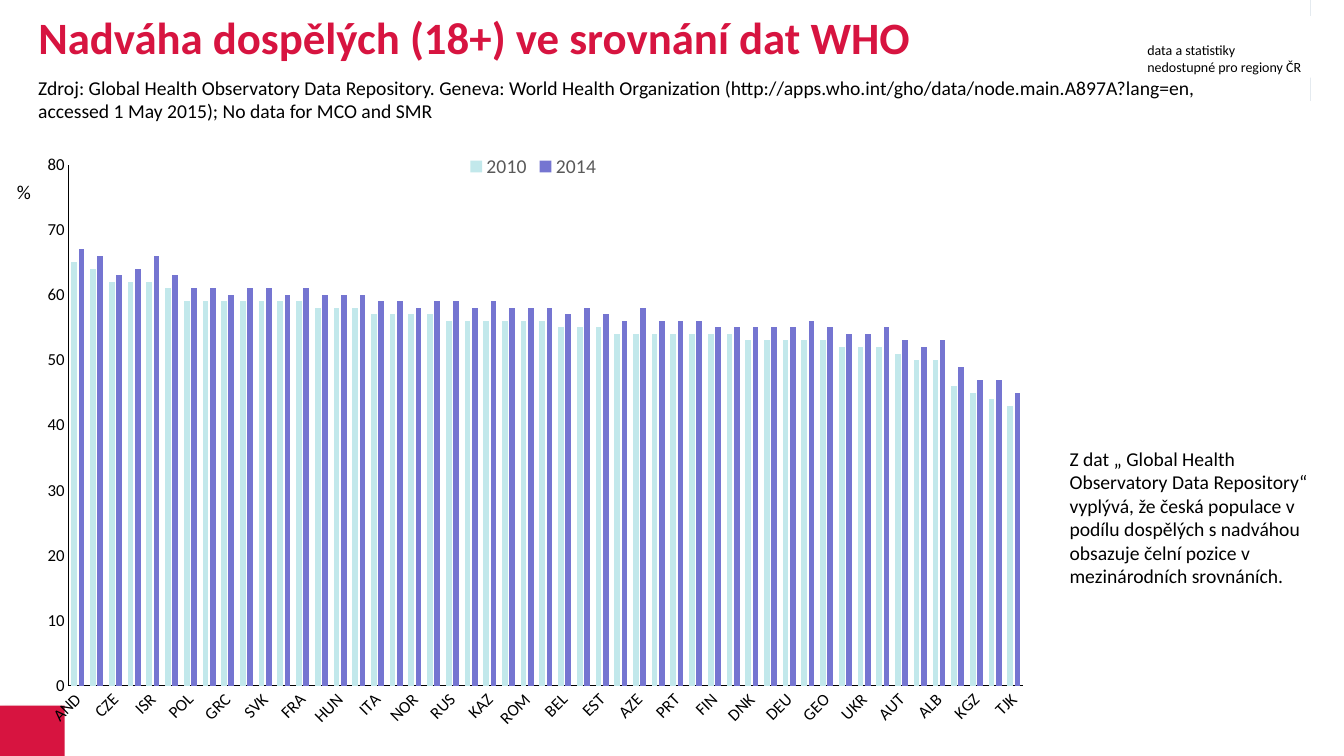
from lxml.etree import SubElement
from pptx import Presentation
from pptx.chart.data import CategoryChartData
from pptx.dml.color import RGBColor
from pptx.enum.chart import XL_CHART_TYPE, XL_LEGEND_POSITION, XL_TICK_MARK
from pptx.enum.shapes import MSO_SHAPE
from pptx.enum.text import MSO_ANCHOR, PP_ALIGN
from pptx.oxml import parse_xml
from pptx.oxml.ns import nsdecls, qn
from pptx.util import Inches, Pt

WIDTH, HEIGHT = 13.33, 7.5
FONT = "Calibri"
RED = RGBColor(0xD7, 0x14, 0x40)
BLUE = RGBColor(0x2E, 0x59, 0x80)
WHITE = RGBColor(0xFF, 0xFF, 0xFF)
BLACK = RGBColor(0, 0, 0)
GREY = RGBColor(0x59, 0x59, 0x59)
AQUA = RGBColor(0xC2, 0xE8, 0xEB)
VIOLET = RGBColor(0x75, 0x75, 0xD1)

TITLE = "Nadváha dospělých (18+) ve srovnání dat WHO"
SOURCE = (
    "Zdroj: Global Health Observatory Data Repository. Geneva: World Health Organization "
    "(http://apps.who.int/gho/data/node.main.A897A?lang=en, accessed 1 May 2015); "
    "No data for MCO and SMR"
)
FINDING = (
    "Z dat „ Global Health Observatory Data Repository“ vyplývá, že česká populace "
    "v podílu dospělých s nadváhou obsazuje čelní pozice v mezinárodních srovnáních."
)
AVAILABILITY = "data a statistiky\nnedostupné pro regiony ČR"

COUNTRIES = (
    "AND TUR CZE MLT ISR GBR POL ESP GRC SVN SVK CYP FRA IRL HUN LTU ITA "
    "BGR NOR HRV RUS ISL KAZ LVA ROM LUX BEL BLR EST MNE AZE SWE PRT NLD "
    "FIN MKD DNK CHE DEU ARM GEO SRB UKR TKM AUT BIH ALB UZB KGZ MDA TJK"
).split()
OVERWEIGHT = {
    "2010": (AQUA, [
        65, 64, 62, 62, 62, 61, 59, 59, 59, 59, 59, 59, 59, 58, 58, 58, 57,
        57, 57, 57, 56, 56, 56, 56, 56, 56, 55, 55, 55, 54, 54, 54, 54, 54,
        54, 54, 53, 53, 53, 53, 53, 52, 52, 52, 51, 50, 50, 46, 45, 44, 43]),
    "2014": (VIOLET, [
        67, 66, 63, 64, 66, 63, 61, 61, 60, 61, 61, 60, 61, 60, 60, 60, 59,
        59, 58, 59, 59, 58, 59, 58, 58, 58, 57, 58, 57, 56, 58, 56, 56, 56,
        55, 55, 55, 55, 55, 56, 55, 54, 54, 55, 53, 52, 53, 49, 47, 47, 45]),
}

# Corner outline as shares of its box: start, two controls, end
CORNER_CURVE = ((0, 0), (1.16, 0.06), (0.96, -0.06), (1, 1))
CURVE_STEPS = 40


def style_font(font, size, color=BLACK, bold=False):
    font.name, font.size, font.bold = FONT, Pt(size), bold
    font.color.rgb = color


def add_corner(slide, box, color, turned=False):
    """Curved corner with a soft shadow; turned rotates it by half a circle."""
    left, top, width, height = box

    def place(x, y):
        x, y = min(max(x, 0), 1), min(max(y, 0), 1)
        if turned:
            x, y = 1 - x, 1 - y
        return left + x * width, top + y * height

    outline = []
    for step in range(CURVE_STEPS + 1):
        t = step / CURVE_STEPS
        weights = ((1 - t) ** 3, 3 * t * (1 - t) ** 2, 3 * t * t * (1 - t), t ** 3)
        outline.append(place(*(
            sum(w * point[axis] for w, point in zip(weights, CORNER_CURVE))
            for axis in (0, 1))))
    outline.append(place(1, 0))
    builder = slide.shapes.build_freeform(*outline[0], scale=Inches(1))
    builder.add_line_segments(outline[1:], close=True)
    corner = builder.convert_to_shape()
    corner.fill.solid()
    corner.fill.fore_color.rgb = color
    corner.line.fill.background()
    corner._element.spPr.append(parse_xml(
        f'<a:effectLst {nsdecls("a")}><a:outerShdw blurRad="50800" dist="38100" '
        'dir="2700000" algn="tl"><a:srgbClr val="000000"><a:alpha val="40000"/>'
        '</a:srgbClr></a:outerShdw></a:effectLst>'))


def add_cover(slide, box):
    """Plain white area that trims the corners."""
    cover = slide.shapes.add_shape(MSO_SHAPE.RECTANGLE, *map(Inches, box))
    cover.shadow.inherit = False
    cover.fill.solid()
    cover.fill.fore_color.rgb = WHITE
    cover.line.fill.background()


def add_text(slide, box, text, size=14, inset=0.1):
    frame = slide.shapes.add_textbox(*map(Inches, box)).text_frame
    frame.word_wrap = True
    frame.margin_left = Inches(inset)
    frame.text = text
    for paragraph in frame.paragraphs:
        for run in paragraph.runs:
            style_font(run.font, size)


def fill_title(slide, box):
    title = slide.shapes.title
    title.left, title.top, title.width, title.height = map(Inches, box)
    frame = title.text_frame
    frame.text = TITLE
    frame.vertical_anchor = MSO_ANCHOR.TOP
    paragraph = frame.paragraphs[0]
    paragraph.alignment = PP_ALIGN.LEFT
    paragraph.line_spacing = 0.9
    style_font(paragraph.runs[0].font, 32, RED, bold=True)


def add_overweight_chart(slide, box):
    data = CategoryChartData(number_format="0")
    data.categories = COUNTRIES
    for year, (_, shares) in OVERWEIGHT.items():
        data.add_series(year, shares)
    chart = slide.shapes.add_chart(
        XL_CHART_TYPE.COLUMN_CLUSTERED, *map(Inches, box), data).chart
    style_font(chart.font, 10)
    chart.has_title = False
    chart.has_legend = True
    chart.legend.position = XL_LEGEND_POSITION.TOP
    chart.legend.include_in_layout = False
    chart.legend._element.find(qn("c:overlay")).set("val", "1")
    style_font(chart.legend.font, 14, GREY)

    # Columns
    plot = chart.plots[0]
    plot.vary_by_categories = False
    plot.gap_width, plot.overlap = 100, -27
    for series, (color, _) in zip(plot.series, OVERWEIGHT.values()):
        series.format.fill.solid()
        series.format.fill.fore_color.rgb = color
        series.invert_if_negative = False

    # Axes
    for axis in (chart.category_axis, chart.value_axis):
        axis.has_major_gridlines = False
        axis.major_tick_mark = axis.minor_tick_mark = XL_TICK_MARK.NONE
        axis.format.line.color.rgb = BLACK
        axis.format.line.width = Pt(0.75)
        style_font(axis.tick_labels.font, 12)
    chart.category_axis._element.txPr.find(qn("a:bodyPr")).set("rot", "-2700000")
    chart.value_axis.minimum_scale, chart.value_axis.maximum_scale = 0, 80
    chart.value_axis.major_unit = 10

    # Plot area as shares of the chart
    plot_area = chart._chartSpace.chart.plotArea
    layout = plot_area.find(qn("c:layout"))
    if layout is None:
        layout = parse_xml(f'<c:layout {nsdecls("c")}/>')
        plot_area.insert(0, layout)
    manual = SubElement(layout, qn("c:manualLayout"))
    for tag, value in (("layoutTarget", "inner"), ("xMode", "edge"), ("yMode", "edge"),
                       ("x", "0.04"), ("y", "0.036"), ("w", "0.945"), ("h", "0.872")):
        SubElement(manual, qn("c:" + tag)).set("val", value)


def add_availability(slide, box):
    left, top, width, height = box
    add_cover(slide, (left, top, width - 0.19, height))
    add_text(slide, (left, top + 0.2, width, 0.44), AVAILABILITY, size=10, inset=0.38)


def build_slide(deck):
    slide = deck.slides.add_slide(deck.slide_layouts[5])
    margin = 0.28
    add_corner(slide, (0, HEIGHT - 1.2, 2.13, 1.2), RED, turned=True)
    add_corner(slide, (WIDTH - 2.22, 0, 2.22, 1.42), BLUE)
    add_cover(slide, (0.64, HEIGHT - 0.68, WIDTH - 0.64, 0.68))
    add_text(slide, (10.51, 4.38, 2.76, 1.82), FINDING)
    add_text(slide, (margin, 0.7, 12.07, 1.04), SOURCE)
    add_overweight_chart(slide, (margin, 1.42, 10.02, 5.93))
    add_text(slide, (0.07, 1.74, 0.42, 0.34), "%")
    fill_title(slide, (margin, 0.11, 11.5, 0.69))
    add_availability(slide, (11, 0.16, 2.33, 0.61))


def main():
    deck = Presentation()
    deck.slide_width, deck.slide_height = Inches(WIDTH), Inches(HEIGHT)
    build_slide(deck)
    deck.save("out.pptx")


if __name__ == "__main__":
    main()
